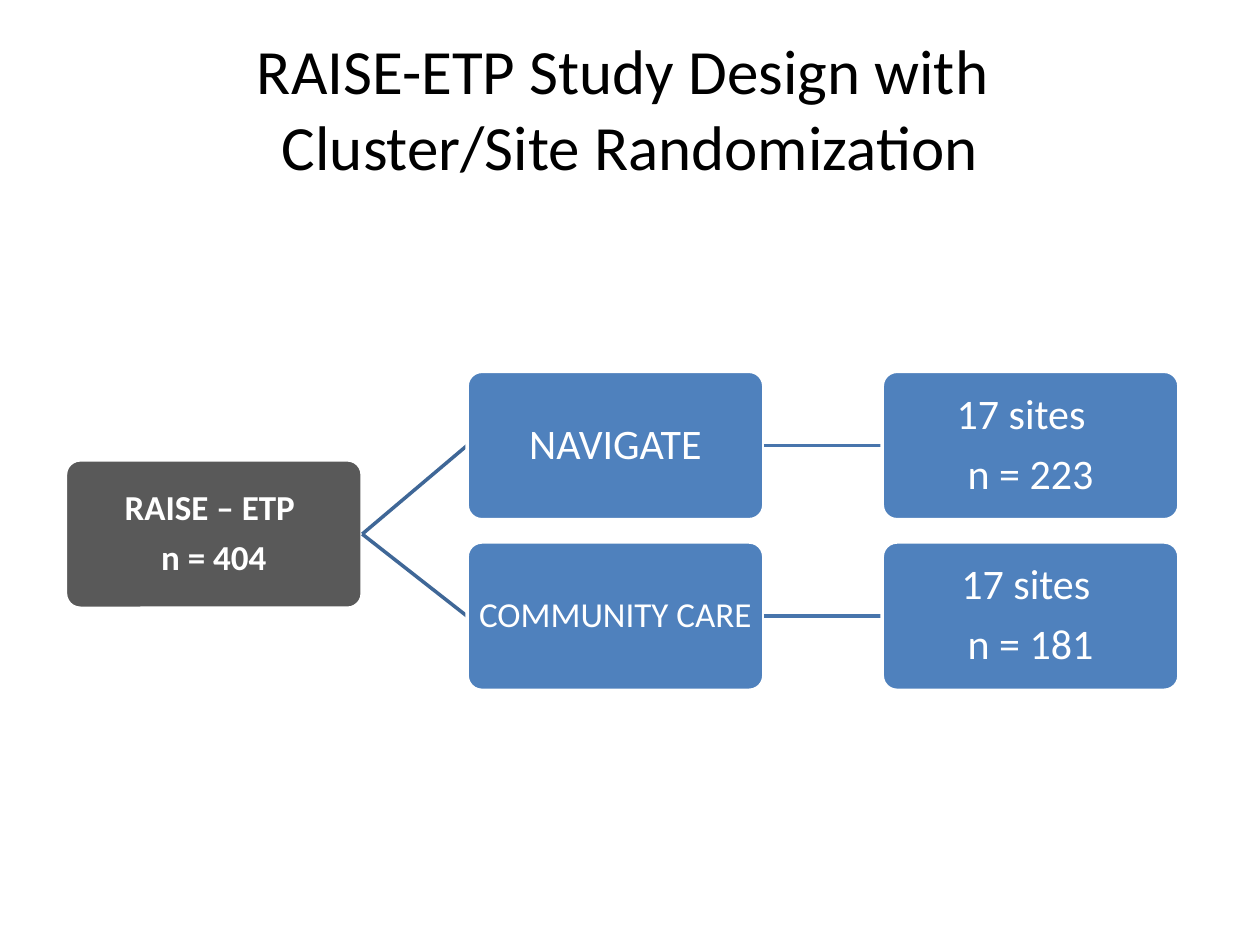
"""Builds the RAISE-ETP study design slide with its two randomized arms."""
from lxml.etree import SubElement
from pptx import Presentation
from pptx.dml.color import RGBColor
from pptx.enum.shapes import MSO_CONNECTOR, MSO_SHAPE
from pptx.enum.text import MSO_ANCHOR, PP_ALIGN
from pptx.oxml.ns import qn
from pptx.util import Pt

COLORS = {
    "title": "000000",
    "text": "FFFFFF",
    "border": "FFFFFF",
    "study": "595959",
    "arm": "4F81BD",
    "split": "3F6797",
    "link": "4875AC",
}
BOX_WIDTH, BOX_HEIGHT = 169.6, 84.8
STUDY_LEFT, ARM_LEFT, SITES_LEFT = 37.4, 266.9, 504.1
STUDY_TOP, NAVIGATE_TOP, COMMUNITY_TOP = 262.8, 212.2, 309.7
BOXES = [
    ("study", None, STUDY_LEFT, STUDY_TOP, ["RAISE – ETP ", "n = 404"], 20),
    ("navigate", "study", ARM_LEFT, NAVIGATE_TOP, ["NAVIGATE"], 24),
    ("navigate sites", "navigate", SITES_LEFT, NAVIGATE_TOP, ["17 sites  ", "n = 223"], 24),
    ("community", "study", ARM_LEFT, COMMUNITY_TOP, ["COMMUNITY CARE"], 20),
    ("community sites", "community", SITES_LEFT, COMMUNITY_TOP, ["17 sites ", "n = 181"], 24),
]


def write_text(shape, lines, size, color, bold=False, anchor=MSO_ANCHOR.MIDDLE,
               margin=1, line_spacing=None, space_after=None):
    frame = shape.text_frame
    frame.word_wrap = True
    frame.vertical_anchor = anchor
    frame.margin_left = frame.margin_right = Pt(margin)
    frame.margin_top = frame.margin_bottom = Pt(min(margin, 3.6))
    for index, line in enumerate(lines):
        paragraph = frame.add_paragraph() if index else frame.paragraphs[0]
        paragraph.text = line
        paragraph.alignment = PP_ALIGN.CENTER
        paragraph.line_spacing = line_spacing
        paragraph.space_after = space_after
        for run in paragraph.runs:
            run.font.name = "Calibri"
            run.font.size = Pt(size)
            run.font.bold = bold
            run.font.color.rgb = RGBColor.from_string(COLORS[color])


presentation = Presentation()
presentation.slide_width, presentation.slide_height = Pt(720), Pt(540)
slide = presentation.slides.add_slide(presentation.slide_layouts[5])

title = slide.shapes.title
title.left, title.top, title.width, title.height = Pt(0), Pt(72), Pt(720), Pt(36)
write_text(title, ["RAISE-ETP Study Design with \vCluster/Site Randomization"],
           size=36, color="title", anchor=MSO_ANCHOR.BOTTOM, margin=7.2)

boxes = {}
for name, parent, left, top, lines, size in BOXES:
    if parent:
        source = boxes[parent]
        connector = slide.shapes.add_connector(
            MSO_CONNECTOR.STRAIGHT, source.left + source.width,
            source.top + source.height // 2, Pt(left), Pt(top + BOX_HEIGHT / 2))
        connector.begin_connect(source, 3)
        line_color = "split" if parent == "study" else "link"
        connector.line.color.rgb = RGBColor.from_string(COLORS[line_color])
        connector.line.width = Pt(2)
        SubElement(connector.element.spPr, qn("a:effectLst"))

    box = slide.shapes.add_shape(MSO_SHAPE.ROUNDED_RECTANGLE, Pt(left), Pt(top),
                                 Pt(BOX_WIDTH), Pt(BOX_HEIGHT))
    box.adjustments[0] = 0.1
    box.shadow.inherit = False
    box.fill.solid()
    box.fill.fore_color.rgb = RGBColor.from_string(COLORS["arm" if parent else "study"])
    box.line.color.rgb = RGBColor.from_string(COLORS["border"])
    box.line.width = Pt(2)
    write_text(box, lines, size=size, color="text", bold=not parent,
               line_spacing=0.9, space_after=Pt(0.35 * size))
    boxes[name] = box
    if parent:
        connector.end_connect(box, 1)

presentation.save("out.pptx")
